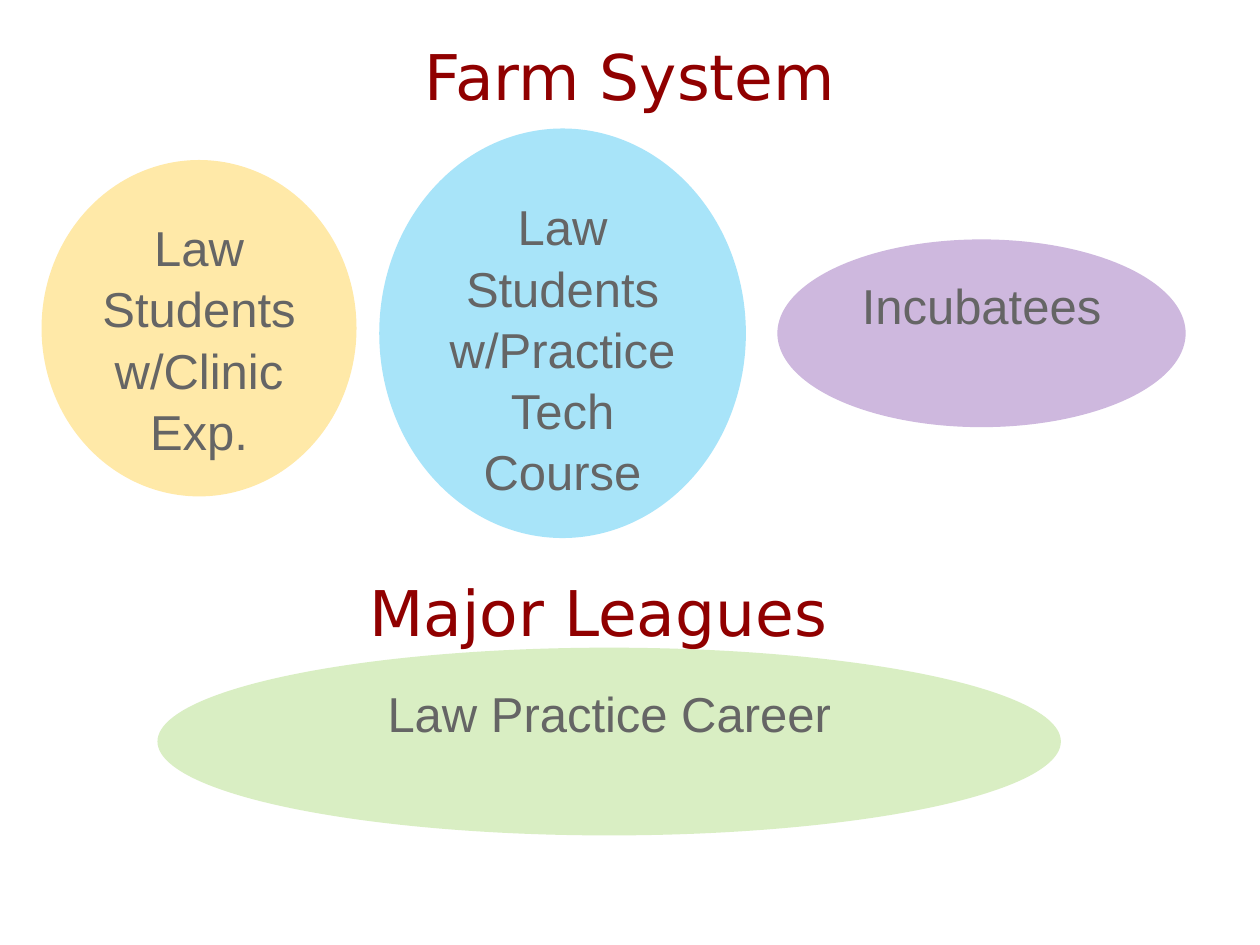
from pptx import Presentation
from pptx.dml.color import RGBColor
from pptx.enum.shapes import MSO_SHAPE
from pptx.enum.text import MSO_ANCHOR, MSO_AUTO_SIZE, PP_ALIGN
from pptx.oxml.ns import qn
from pptx.util import Inches, Pt
from lxml import etree

OVAL = MSO_SHAPE.OVAL
TOP = MSO_ANCHOR.TOP
FIT_SHAPE = MSO_AUTO_SIZE.SHAPE_TO_FIT_TEXT
CENTER = PP_ALIGN.CENTER

THEME = {
    "heading": ("DejaVu Sans", Pt(36), RGBColor.from_string("900000")),
    "label": ("Arial", Pt(28), RGBColor.from_string("656565")),
    "gold": "FFC000",
    "blue": "00B0F0",
    "purple": "7030A0",
    "green": "92D050",
    "opacity": 34,
    "label_spacing": 1.04,
}


def write_text(box, lines, style, spacing=1.0):
    """Fill a box with centred, top-anchored paragraphs in a theme style."""
    frame = box.text_frame
    frame.word_wrap = True
    frame.vertical_anchor = TOP
    frame.text = "\n".join(lines)
    for para in frame.paragraphs:
        para.alignment = CENTER
        para.line_spacing = spacing
        para.font.name, para.font.size, para.font.color.rgb = THEME[style]


deck = Presentation()
deck.slide_width, deck.slide_height = Inches(10), Inches(7.5)
page = deck.slides.add_slide(deck.slide_layouts[5])

# Translucent ovals: three farm-system groups and the career they lead to
ovals = [
    (0.33, 1.27, 2.5, 2.67, "gold", ["Law Students", "w/Clinic Exp."]),
    (3.01, 1.02, 2.91, 3.25, "blue", ["Law Students w/Practice Tech Course"]),
    (6.17, 1.9, 3.24, 1.49, "purple", ["Incubatees"]),
    (1.25, 5.14, 7.17, 1.49, "green", ["Law Practice Career"]),
]
for left, top, width, height, color, lines in ovals:
    oval = page.shapes.add_shape(
        OVAL, Inches(left), Inches(top), Inches(width), Inches(height))
    oval.shadow.inherit = False
    oval.line.fill.background()
    oval.fill.solid()
    oval.fill.fore_color.rgb = RGBColor.from_string(THEME[color])
    tint = oval.fill._xPr.find(qn("a:solidFill"))[0]
    etree.SubElement(tint, qn("a:alpha"), val=str(THEME["opacity"] * 1000))
    write_text(oval, lines, "label", THEME["label_spacing"])

# Headings: the slide title above the groups, a second one above the career
title = page.shapes.title
title.left, title.top = Inches(0.25), Inches(0.25)
title.width, title.height = Inches(9.5), Inches(0.71)
leagues = page.shapes.add_textbox(Inches(0), Inches(4.5), Inches(9.5), Inches(0.71))
for heading, words in ((title, "Farm System"), (leagues, "Major Leagues")):
    write_text(heading, [words], "heading")
    heading.text_frame.auto_size = FIT_SHAPE

deck.save("out.pptx")
